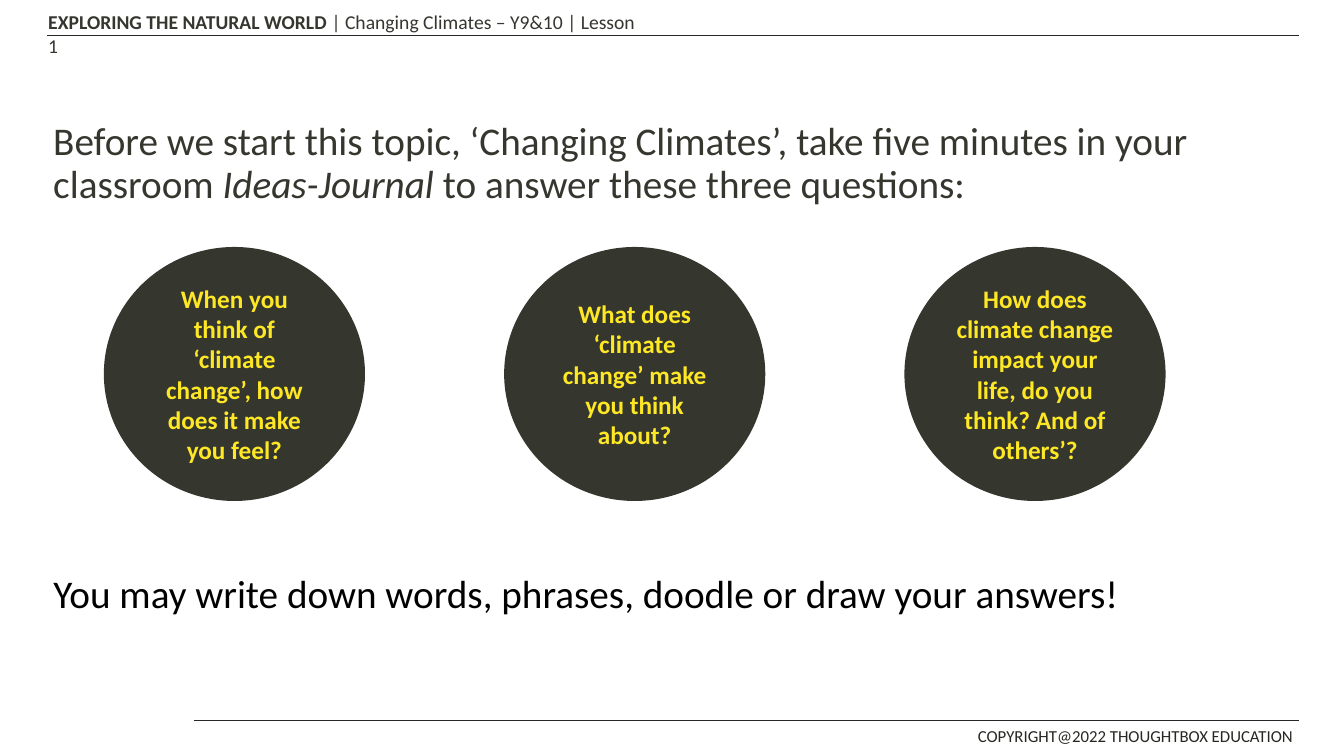
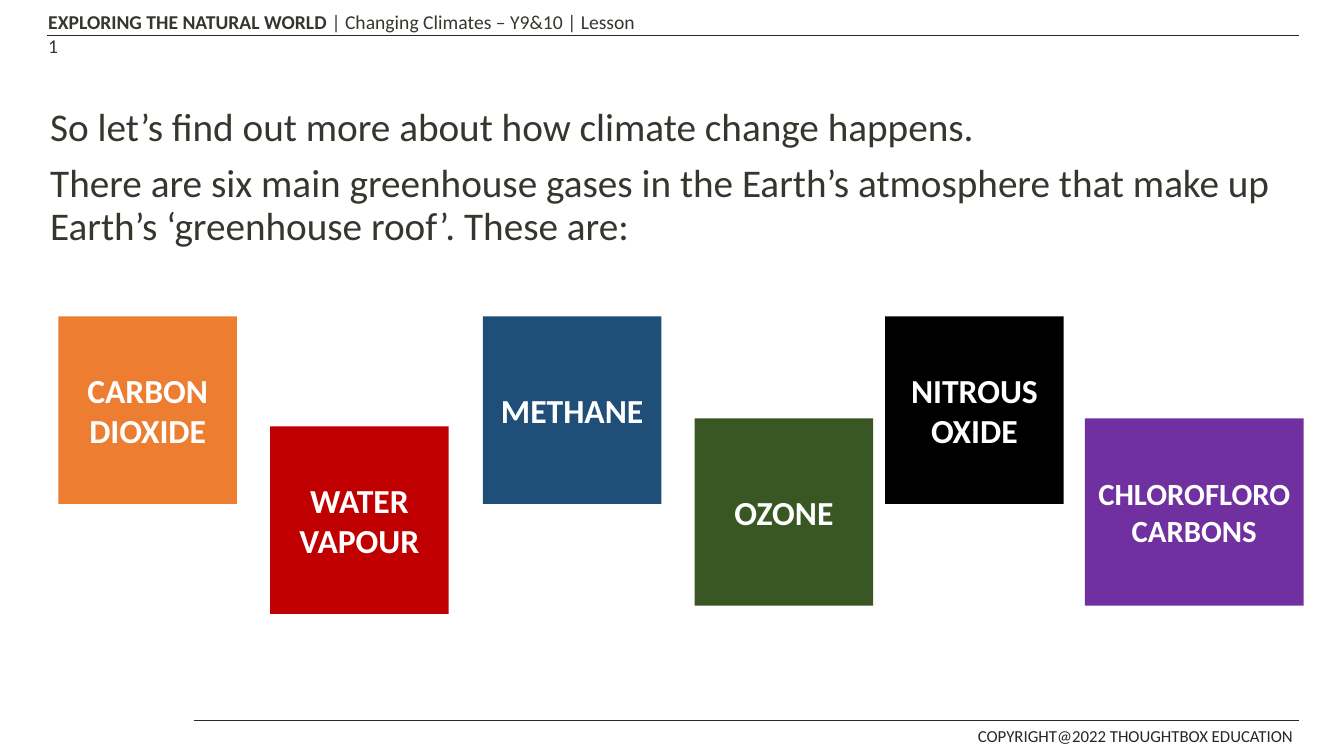
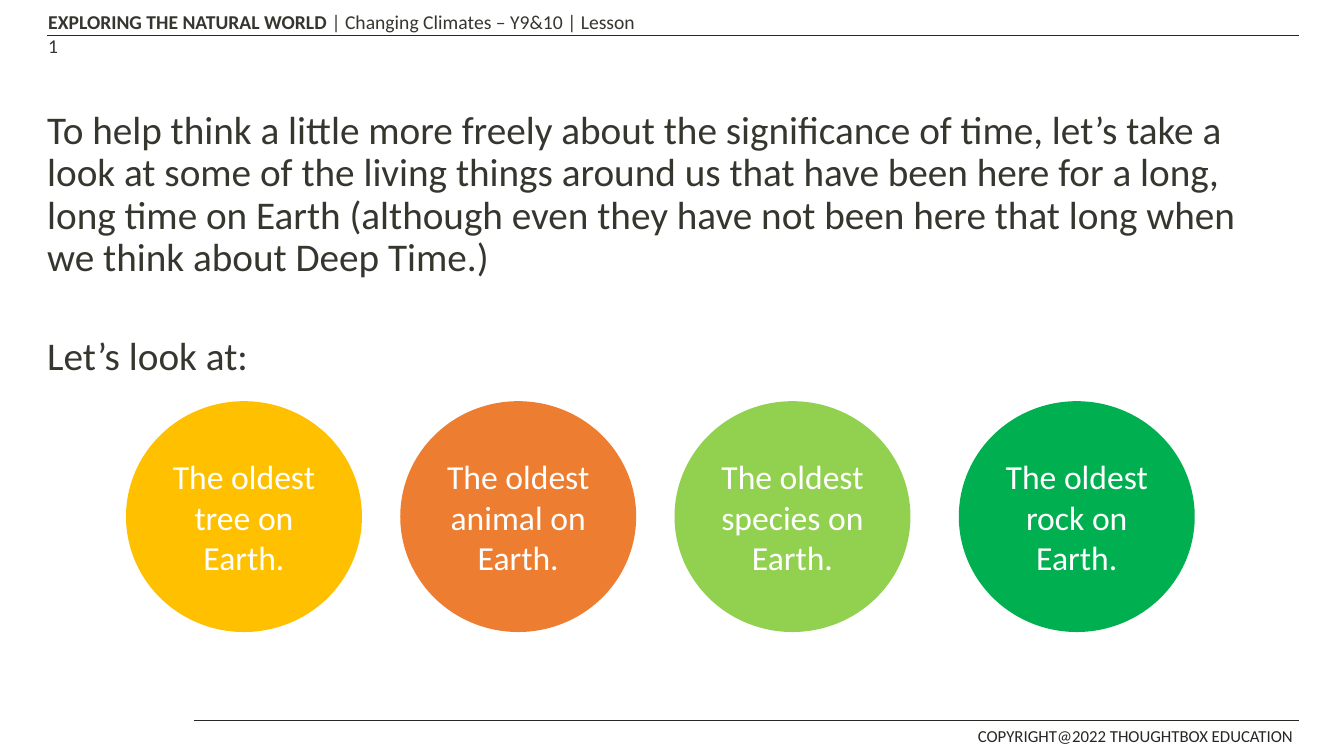
from pptx import Presentation
from pptx.dml.color import RGBColor
from pptx.enum.shapes import MSO_CONNECTOR, MSO_SHAPE
from pptx.enum.text import MSO_ANCHOR, PP_ALIGN
from pptx.oxml.xmlchemy import OxmlElement
from pptx.util import Inches, Pt

STRAIGHT = MSO_CONNECTOR.STRAIGHT
RECT, OVAL, DISC = MSO_SHAPE.RECTANGLE, MSO_SHAPE.OVAL, MSO_SHAPE.FLOWCHART_CONNECTOR
TOP, MIDDLE, CENTER = MSO_ANCHOR.TOP, MSO_ANCHOR.MIDDLE, PP_ALIGN.CENTER

FACE = "Calibri"
LEAD = 28
COLORS = {
    "rule": "252823", "ink": "35372F", "black": "000000", "white": "FFFFFF",
    "yellow": "FEE725", "orange": "ED7D31", "red": "C00000", "navy": "1F4E79",
    "forest": "385723", "purple": "7030A0", "amber": "FFC000",
    "lime": "92D050", "green": "00B050",
}


def color(name):
    return RGBColor.from_string(COLORS[name])


def style(run, size, tint, bold=False, italic=False):
    font = run.font
    font.name, font.size = FACE, Pt(size)
    font.bold, font.italic = bold, italic
    font.color.rgb = color(tint)


def write(slide, box, paras, size=LEAD, tint="ink", anchor=TOP, line=None, gap=0):
    """Add a text box; each paragraph is a list of (text, run style) pairs."""
    frame = slide.shapes.add_textbox(*map(Inches, box)).text_frame
    frame.word_wrap = True
    frame.vertical_anchor = anchor
    for i, parts in enumerate(paras):
        para = frame.add_paragraph() if i else frame.paragraphs[0]
        if line:
            para.line_spacing = line
        if i:
            para.space_before = Pt(gap)
        for text, look in parts:
            run = para.add_run()
            run.text = text
            style(run, size, tint, **look)


def rule(slide, left, right, y):
    line = slide.shapes.add_connector(
        STRAIGHT, Inches(left), Inches(y), Inches(right), Inches(y))
    line.line.color.rgb = color("rule")
    line.line.width = Pt(1)
    line._element.spPr.append(OxmlElement("a:effectLst"))


def tile(slide, kind, box, text, fill, size=24, tint="white", bold=False):
    shape = slide.shapes.add_shape(kind, *map(Inches, box))
    shape.shadow.inherit = False
    shape.fill.solid()
    shape.fill.fore_color.rgb = color(fill)
    shape.line.fill.background()
    frame = shape.text_frame
    frame.word_wrap = True
    frame.vertical_anchor = MIDDLE
    para = frame.paragraphs[0]
    para.text = text
    para.alignment = CENTER
    style(para.runs[0], size, tint, bold)


def page(deck):
    """Add a blank slide with the shared header and footer."""
    slide = deck.slides.add_slide(deck.slide_layouts[6])
    rule(slide, 0.47, 12.88, 0.35)
    write(slide, (9.6, 7.15, 3.4, 0.31),
          [[("COPYRIGHT@2022 THOUGHTBOX EDUCATION", {})]], 12, "rule")
    rule(slide, 1.92, 12.88, 7.15)
    write(slide, (0.38, 0.05, 6.08, 0.34),
          [[("EXPLORING THE NATURAL WORLD ", {"bold": True}),
            ("| Changing Climates – Y9&10 | Lesson 1", {})]], 14)
    return slide


def questions(deck):
    slide = page(deck)
    write(slide, (0.43, 0.98, 12.46, 1.3), [[
        ("Before we start this topic, ‘Changing Climates’, take five minutes "
         "in your classroom ", {}),
        ("Ideas-Journal ", {"italic": True}),
        ("to answer these three questions:", {}),
    ]], anchor=MIDDLE, line=0.9)
    asks = (
        "When you think of ‘climate change’, how does it make you feel?",
        "What does ‘climate change’ make you think about?",
        "How does climate change impact your life, do you think? And of others’?",
    )
    for i, ask in enumerate(asks):
        tile(slide, DISC, (1.03 + 3.97 * i, 2.45, 2.59, 2.52), ask, "ink",
             18, "yellow", True)
    write(slide, (0.43, 5.6, 12.42, 0.57),
          [[("You may write down words, phrases, doodle or draw your answers!", {})]],
          tint="black")


def gases(deck):
    slide = page(deck)
    write(slide, (0.4, 1.02, 12.54, 1.6), [
        [("So let’s find out more about how climate change happens.", {})],
        [("There are six main greenhouse gases in the Earth’s atmosphere that "
          "make up Earth’s ‘greenhouse roof’. These are:", {})],
    ], line=0.9, gap=10)
    rows = (
        ("CARBON DIOXIDE", "orange", 0.58, 3.14, 1.77, 24),
        ("WATER VAPOUR", "red", 2.68, 4.23, 1.77, 24),
        ("METHANE", "navy", 4.79, 3.14, 1.77, 24),
        ("OZONE", "forest", 6.89, 4.15, 1.77, 24),
        ("NITROUS OXIDE", "black", 8.78, 3.14, 1.77, 24),
        ("CHLOROFLOROCARBONS", "purple", 10.76, 4.15, 2.17, 22),
    )
    for name, fill, x, y, wide, size in rows:
        tile(slide, RECT, (x, y, wide, 1.86), name, fill, size, bold=True)


def oldest(deck):
    slide = page(deck)
    write(slide, (0.37, 1.05, 12.5, 2.8), [
        [("To help think a little more freely about the significance of time, "
          "let’s take a look at some of the living things around us that have "
          "been here for a long, long time on Earth (although even they have "
          "not been here that long when we think about Deep Time.)", {})],
        [("Let’s look at:", {})],
    ], line=0.9, gap=40)
    things = (("tree", "amber", 1.25), ("animal", "orange", 3.97),
              ("species", "lime", 6.69), ("rock", "green", 9.51))
    for thing, fill, x in things:
        tile(slide, OVAL, (x, 3.98, 2.34, 2.29), f"The oldest {thing} on Earth.", fill)


def main():
    deck = Presentation()
    deck.slide_width, deck.slide_height = Inches(13.33), Inches(7.5)
    for build in (questions, gases, oldest):
        build(deck)
    deck.save("out.pptx")


if __name__ == "__main__":
    main()
